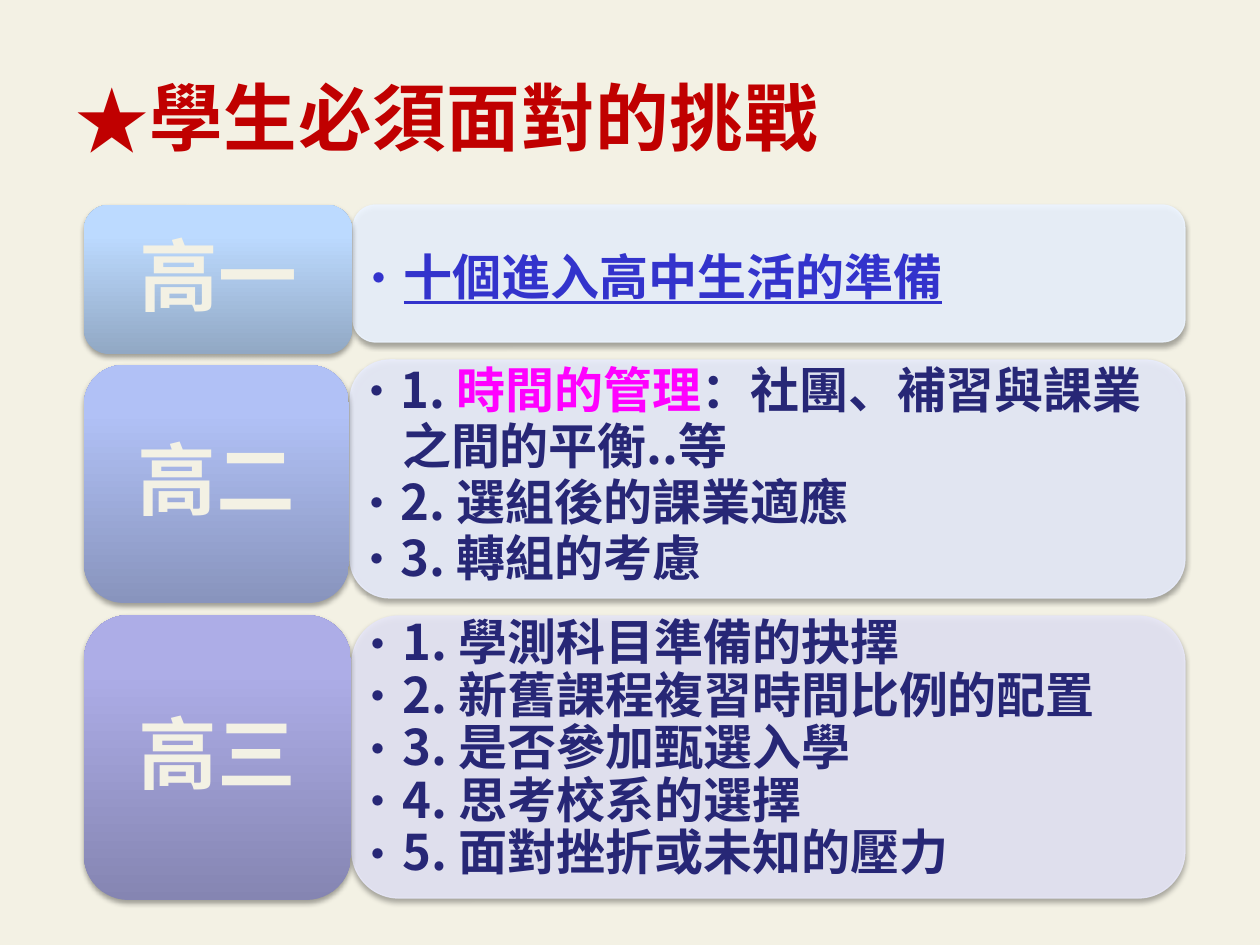
import pptx
import pptx.util
from pptx.dml.color import RGBColor
from pptx.enum.shapes import MSO_SHAPE
from pptx.enum.text import MSO_ANCHOR, MSO_AUTO_SIZE, PP_ALIGN
from pptx.oxml.ns import qn
from pptx.oxml.xmlchemy import OxmlElement

FONT = "Noto Sans CJK SC"
CREAM = RGBColor(0xF3, 0xF1, 0xE4)
RED = RGBColor(0xC0, 0x00, 0x00)
BLACK = RGBColor(0x00, 0x00, 0x00)
BLUE = RGBColor(0x33, 0x33, 0xCC)
NAVY = RGBColor(0x27, 0x27, 0x76)
MAGENTA = RGBColor(0xFF, 0x00, 0xFF)
ICE = RGBColor(0xEC, 0xF4, 0xFF)
MIST = RGBColor(0xE8, 0xEC, 0xFB)
LILAC = RGBColor(0xE6, 0xE6, 0xF6)
# Gradient colours run from the bottom of a label to its top
SKY_STOPS = (RGBColor(0x91, 0xA8, 0xC4), RGBColor(0xBC, 0xDA, 0xFF), RGBColor(0xBE, 0xDB, 0xFF))
PERIWINKLE_STOPS = (RGBColor(0x88, 0x94, 0xBD), RGBColor(0xB1, 0xC1, 0xF6), RGBColor(0xB0, 0xC1, 0xF8))
VIOLET_STOPS = (RGBColor(0x85, 0x85, 0xB2), RGBColor(0xAD, 0xAD, 0xE7), RGBColor(0xAC, 0xAC, 0xE9))

# Each row: label, label box, gradient, panel box, panel colour, line pitch, anchor, items
ROWS = [
    ("高一", (84, 205, 268, 149), SKY_STOPS, (353, 205, 832, 137), ICE, 36, MSO_ANCHOR.MIDDLE,
     [[("十個進入高中生活的準備", dict(color=BLUE, underline=True))]]),
    ("高二", (84, 365, 265, 238), PERIWINKLE_STOPS, (350, 360, 835, 238), MIST, 32, MSO_ANCHOR.TOP,
     [[("1. ", {}), ("時間的管理", dict(color=MAGENTA)), ("：社團、補習與課業\v 之間的平衡..等", {})],
      [("2. 選組後的課業適應", {})],
      [("3. 轉組的考慮", {})]]),
    ("高三", (84, 615, 267, 285), VIOLET_STOPS, (352, 616, 833, 282), LILAC, 30, MSO_ANCHOR.TOP,
     [[("1. 學測科目準備的抉擇", {})],
      [("2. 新舊課程複習時間比例的配置", {})],
      [("3. 是否參加甄選入學", {})],
      [("4. 思考校系的選擇", {})],
      [("5. 面對挫折或未知的壓力", {})]]),
]


def px(n):
    return pptx.util.Emu(round(n * 914400 / 126))


def sub(parent, tag, **attrs):
    el = OxmlElement(tag)
    for name, value in attrs.items():
        el.set(name, str(value))
    parent.append(el)
    return el


def add_shadow(effects, blur, dist, alpha):
    """Drop a black shadow straight down; blur and dist are in points."""
    shadow = sub(effects, "a:outerShdw", blurRad=pptx.util.Pt(blur), dist=pptx.util.Pt(dist),
                 dir=5400000, rotWithShape=0)
    sub(sub(shadow, "a:srgbClr", val=BLACK), "a:alpha", val=alpha * 1000)


def add_round_rect(slide, box):
    sp = slide.shapes.add_shape(MSO_SHAPE.ROUNDED_RECTANGLE, *map(px, box))
    sp.shadow.inherit = False
    add_shadow(sp._element.spPr.find(qn("a:effectLst")), 3.1, 1.8, 35)
    return sp


def add_panel(slide, box, color):
    sp = add_round_rect(slide, box)
    sp.fill.solid()
    sp.fill.fore_color.rgb = color
    sp.line.color.rgb = color
    sp.line.width = pptx.util.Pt(0.75)
    for clr in sp._element.spPr.iter(qn("a:srgbClr")):
        if clr.getparent().tag == qn("a:solidFill"):
            sub(clr, "a:alpha", val=90000)


def add_label_plate(slide, box, colors):
    sp = add_round_rect(slide, box)
    sp.fill.gradient()
    sp.fill.gradient_angle = 90
    sp.line.fill.background()
    stops = next(sp._element.spPr.iter(qn("a:gsLst")))
    for old in list(stops):
        stops.remove(old)
    for pos, color in zip((0, 80, 100), colors):
        sub(sub(stops, "a:gs", pos=pos * 1000), "a:srgbClr", val=color)


def add_text_frame(slide, box, margins=(12, 6), anchor=MSO_ANCHOR.TOP, wrap=True):
    tf = slide.shapes.add_textbox(*map(px, box)).text_frame
    tf.word_wrap = wrap
    tf.vertical_anchor = anchor
    tf.margin_left = tf.margin_right = px(margins[0])
    tf.margin_top = tf.margin_bottom = px(margins[1])
    return tf


def add_bullet(p, char, hang=0):
    pPr = p._p.get_or_add_pPr()
    pPr.set("marL", str(px(hang)))
    pPr.set("indent", str(-px(hang)))
    sub(pPr, "a:buFont", typeface=FONT)
    sub(pPr, "a:buChar", char=char)


def add_text(p, text, size=28, color=NAVY, underline=None):
    """Add bold text, with a line break at each vertical tab."""
    for i, part in enumerate(text.split("\v")):
        if i:
            p.add_line_break()
        r = p.add_run()
        r.text = part
        r.font.size = pptx.util.Pt(size)
        r.font.bold = True
        r.font.underline = underline
        r.font.color.rgb = color
        r.font.name = FONT
        sub(r._r.get_or_add_rPr(), "a:ea", typeface=FONT)
    return r


def add_title(slide):
    tf = add_text_frame(slide, (64, 66, 767, 102), wrap=False)
    tf.auto_size = MSO_AUTO_SIZE.SHAPE_TO_FIT_TEXT
    p = tf.paragraphs[0]
    add_bullet(p, "★")
    r = add_text(p, "學生必須面對的挑戰", size=42, color=RED)
    rPr = r._r.get_or_add_rPr()
    rPr.set("spc", "50")
    effects = OxmlElement("a:effectLst")
    rPr.find(qn("a:solidFill")).addnext(effects)
    add_shadow(effects, 3, 3, 100)


def add_label(slide, text, box, colors):
    add_label_plate(slide, box, colors)
    p = add_text_frame(slide, box, (24, 12), MSO_ANCHOR.MIDDLE).paragraphs[0]
    p.alignment = PP_ALIGN.CENTER
    p.line_spacing = 0.9
    p.space_after = pptx.util.Pt(16)
    add_text(p, text, size=45, color=CREAM)


def add_items(slide, items, box, pitch, anchor):
    tf = add_text_frame(slide, box, (2, 2), anchor)
    for i, item in enumerate(items):
        p = tf.add_paragraph() if i else tf.paragraphs[0]
        p.level = 1
        add_bullet(p, "•", hang=39)
        p.line_spacing = pptx.util.Pt(pitch)
        for text, style in item:
            add_text(p, text, **style)


def main():
    prs = pptx.Presentation()
    prs.slide_width, prs.slide_height = px(1260), px(945)
    slide = prs.slides.add_slide(prs.slide_layouts[6])
    slide.background.fill.solid()
    slide.background.fill.fore_color.rgb = CREAM
    add_title(slide)
    for label, label_box, stops, panel_box, color, pitch, anchor, items in ROWS:
        add_panel(slide, panel_box, color)
        add_items(slide, items, panel_box, pitch, anchor)
        add_label(slide, label, label_box, stops)
    prs.save("out.pptx")


if __name__ == "__main__":
    main()
